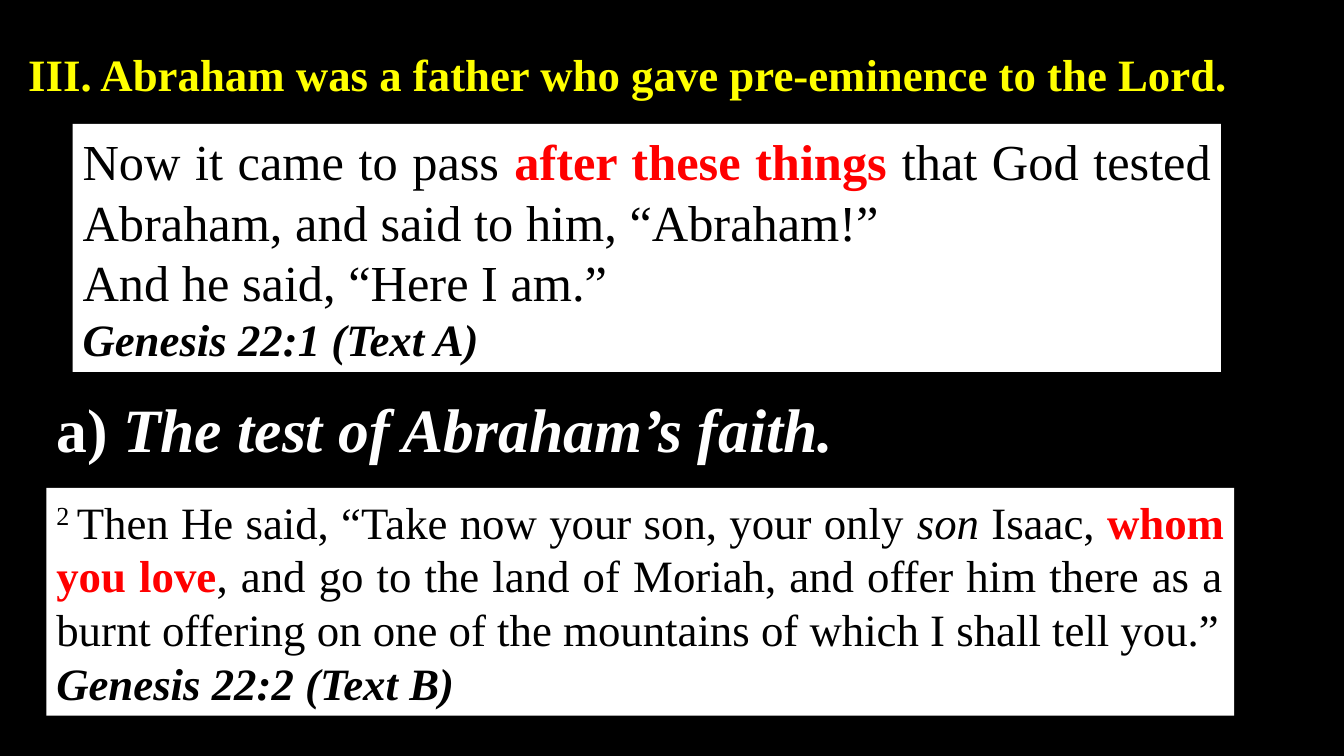
from pptx import Presentation
from pptx.dml.color import RGBColor
from pptx.enum.shapes import MSO_SHAPE as Shape
from pptx.enum.text import MSO_ANCHOR as Anchor, MSO_AUTO_SIZE as AutoSize, PP_ALIGN as Align
from pptx.util import Inches, Pt

COLORS = {"black": "000000", "white": "FFFFFF", "yellow": "FFFF00", "red": "FF0000"}
FONT = "Times New Roman"

# Each paragraph: alignment, size, spans of (text, styles)
HEADING = [(Align.LEFT, 32, [
    ("III. Abraham was a father who gave pre-eminence to the Lord.", "bold yellow")])]
POINT = [(Align.LEFT, 44, [
    ("a) ", "bold white"), ("The test of Abraham’s faith.", "bold italic white")])]
VERSE_1 = [
    (Align.JUSTIFY, 36, [
        ("Now it came to pass ", ""),
        ("after these things ", "bold red"),
        ("that God tested Abraham, and said to him, “Abraham!” ", "")]),
    (Align.LEFT, 36, [("And he said, “Here I am.”", "")]),
    (Align.JUSTIFY, 32, [("Genesis 22:1 (Text A)", "bold italic")]),
]
VERSE_2 = [
    (Align.JUSTIFY, 32, [
        ("2 ", "superscript"),
        ("Then He said, “Take now your son, your only ", ""),
        ("son", "italic"),
        (" Isaac, ", ""),
        ("whom you love", "bold red"),
        (", and go to the land of Moriah, and offer him there as a burnt offering "
         "on one of the mountains of which I shall tell you.”", "")]),
    (Align.JUSTIFY, 32, [("Genesis 22:2 (Text B)", "bold italic")]),
]

# Left, top, width, height
HEADING_AT = (0.18, 0.41, 12.48, 0.64)
POINT_AT = (0.46, 3.83, 8.14, 0.84)
VERSES = [(VERSE_1, (0.72, 1.23, 11.39, 2.46)), (VERSE_2, (0.46, 4.84, 11.78, 2.26))]


def color(name):
    return RGBColor.from_string(COLORS[name])


def write(frame, paragraphs, anchor=Anchor.TOP):
    frame.word_wrap = True
    frame.auto_size = AutoSize.NONE
    frame.vertical_anchor = anchor
    for index, (align, size, spans) in enumerate(paragraphs):
        para = frame.add_paragraph() if index else frame.paragraphs[0]
        para.alignment = align
        for text, style in spans:
            span = para.add_run()
            span.text = text
            styles = style.split()
            font = span.font
            font.name, font.size = FONT, Pt(size)
            font.bold = "bold" in styles
            font.italic = "italic" in styles
            font.color.rgb = color(next((s for s in styles if s in COLORS), "black"))
            if "superscript" in styles:
                span._r.get_or_add_rPr().set("baseline", "30000")


deck = Presentation()
deck.slide_width, deck.slide_height = Inches(13.33), Inches(7.5)
page = deck.slides.add_slide(deck.slide_layouts[5])
page.background.fill.solid()
page.background.fill.fore_color.rgb = color("black")

title = page.shapes.title
title.left, title.top, title.width, title.height = map(Inches, HEADING_AT)
write(title.text_frame, HEADING)
title.text_frame.paragraphs[0].space_after = Pt(2)

point_box = page.shapes.add_textbox(*map(Inches, POINT_AT))
write(point_box.text_frame, POINT)

for verse, place in VERSES:
    box = page.shapes.add_shape(Shape.RECTANGLE, *map(Inches, place))
    box.shadow.inherit = False
    box.fill.solid()
    box.fill.fore_color.rgb = color("white")
    box.line.fill.background()
    write(box.text_frame, verse, Anchor.MIDDLE)

deck.save("out.pptx")
